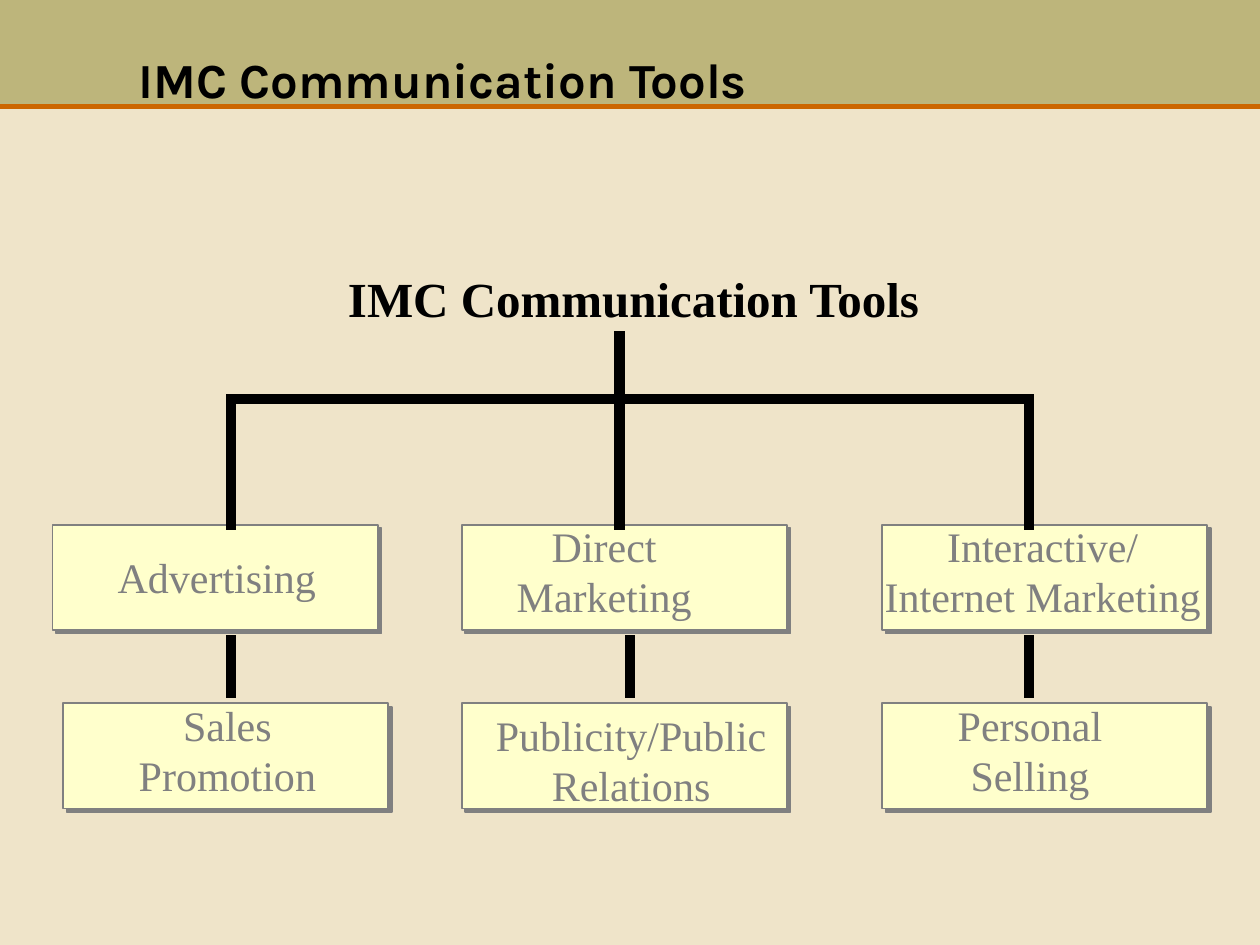
"""Build the IMC communication tools slide: a title band above a tree of six tools."""
from dataclasses import dataclass

from lxml import etree
from pptx import Presentation
from pptx import util as u
from pptx.dml import color
from pptx.enum import shapes, text
from pptx.oxml import ns


@dataclass(frozen=True)
class Theme:
    background: str = "EFE4C9"
    band: str = "BDB57B"
    rule: str = "CC6600"
    box: str = "FFFFCC"
    grey: str = "808080"
    ink: str = "000000"
    title_font: str = "Karla"
    body_font: str = "Times New Roman"
    heading_size: int = 28
    label_size: int = 24


THEME = Theme()
BOX_SIZE = 6.56, 2.12
MIDDLE, RIGHT = 9.31, 17.78
UPPER, LOWER = 10.58, 14.18
BOXES = [(1.06, UPPER), (MIDDLE, UPPER), (RIGHT, UPPER),
         (1.27, LOWER), (MIDDLE, LOWER), (RIGHT, LOWER)]
LEFT_STEM, CENTRE_STEM, RIGHT_STEM = 4.66, 12.49, 20.74
BAR = 8.04
STEMS = [(LEFT_STEM, BAR, UPPER), (CENTRE_STEM, 6.77, UPPER), (RIGHT_STEM, BAR, UPPER)]
LINKS = [(x, 12.91, 13.97) for x in (LEFT_STEM, 12.7, RIGHT_STEM)]
LABELS = [
    (["Advertising"], 2.12, 11.0, 4.5, 1.27),
    (["Direct", "Marketing"], 10.16, 10.37, 4.04, 2.29),
    (["Interactive/", "Internet Marketing"], 17.58, 10.37, 6.88, 2.29),
    (["Sales", "Promotion"], 2.54, 13.97, 4.09, 2.29),
    (["Publicity/Public", "Relations"], 9.74, 14.18, 5.97, 2.29),
    (["Personal", "Selling"], 19.05, 13.97, 3.43, 2.29),
]


def rgb(value):
    """Turn a hex string into a colour."""
    return color.RGBColor.from_string(value)


def add_rectangle(page, left, top, width, height, fill):
    """Add a flat rectangle without an outline."""
    box = page.shapes.add_shape(shapes.MSO_SHAPE.RECTANGLE,
                                *map(u.Cm, (left, top, width, height)))
    box.shadow.inherit = False
    box.fill.solid()
    box.fill.fore_color.rgb = rgb(fill)
    box.line.fill.background()
    return box


def add_tool_box(page, left, top):
    """Add an outlined box with a hard shadow to the lower right."""
    box = add_rectangle(page, left, top, *BOX_SIZE, THEME.box)
    box.line.color.rgb = rgb(THEME.grey)
    box.line.width = u.Pt(1)
    effects = box.element.spPr.find(ns.qn("a:effectLst"))
    shadow = etree.SubElement(effects, ns.qn("a:outerShdw"), dist=str(u.Pt(2.8)),
                              dir=str(45 * 60000), algn="ctr", rotWithShape="0")
    etree.SubElement(shadow, ns.qn("a:srgbClr"), val=THEME.grey)


def add_line(page, start, end, ink, width):
    """Add a straight line with square ends, so that corners close."""
    line = page.shapes.add_connector(shapes.MSO_CONNECTOR.STRAIGHT,
                                     *map(u.Cm, (*start, *end)))
    line.line.color.rgb = rgb(ink)
    line.line.width = u.Pt(width)
    properties = line.element.spPr
    properties.find(ns.qn("a:ln")).set("cap", "sq")
    etree.SubElement(properties, ns.qn("a:effectLst"))


def add_span(para, words, font, size, ink, bold=False):
    """Add one formatted run to a paragraph."""
    span = para.add_run()
    span.text = words
    span.font.name = font
    span.font.size = u.Pt(size)
    span.font.bold = bold
    span.font.color.rgb = rgb(ink)


def add_label(page, lines, left, top, width, height,
              size=THEME.label_size, ink=THEME.grey, bold=False):
    """Add a text box with one centred paragraph for each line."""
    box = page.shapes.add_textbox(*map(u.Cm, (left, top, width, height)))
    frame = box.text_frame
    frame.word_wrap = False
    frame.auto_size = text.MSO_AUTO_SIZE.SHAPE_TO_FIT_TEXT
    for index, words in enumerate(lines):
        para = frame.add_paragraph() if index else frame.paragraphs[0]
        para.alignment = text.PP_ALIGN.CENTER
        add_span(para, words, THEME.body_font, size, ink, bold)


def place_title(page, words):
    """Lay the title placeholder over the band and fill it."""
    title = page.shapes.title
    page.shapes.element.append(title.element)
    title.left, title.top, title.width, title.height = map(u.Cm, (2.54, 0, 20.12, 3.18))
    frame = title.text_frame
    frame.word_wrap = True
    frame.auto_size = text.MSO_AUTO_SIZE.NONE
    frame.vertical_anchor = text.MSO_ANCHOR.MIDDLE
    para = frame.paragraphs[0]
    para.alignment = text.PP_ALIGN.LEFT
    add_span(para, words, THEME.title_font, THEME.heading_size, THEME.ink, True)


def main():
    """Build and save the deck."""
    deck = Presentation()
    deck.slide_width, deck.slide_height = u.Cm(25.4), u.Cm(19.05)
    page = deck.slides.add_slide(deck.slide_layouts.get_by_name("Title Only"))
    page.background.fill.solid()
    page.background.fill.fore_color.rgb = rgb(THEME.background)

    add_rectangle(page, 0, 0, 25.4, 2.15, THEME.band)
    add_line(page, (0, 2.15), (25.4, 2.15), THEME.rule, 3)
    place_title(page, "IMC Communication Tools")

    for left, top in BOXES:
        add_tool_box(page, left, top)
    add_line(page, (LEFT_STEM, BAR), (RIGHT_STEM, BAR), THEME.ink, 6)
    for x, top, bottom in STEMS + LINKS:
        add_line(page, (x, top), (x, bottom), THEME.ink, 6)

    add_label(page, ["IMC Communication Tools"], 6.7, 5.28, 12.14, 1.45,
              THEME.heading_size, THEME.ink, True)
    for label in LABELS:
        add_label(page, *label)
    deck.save("out.pptx")


if __name__ == "__main__":
    main()
